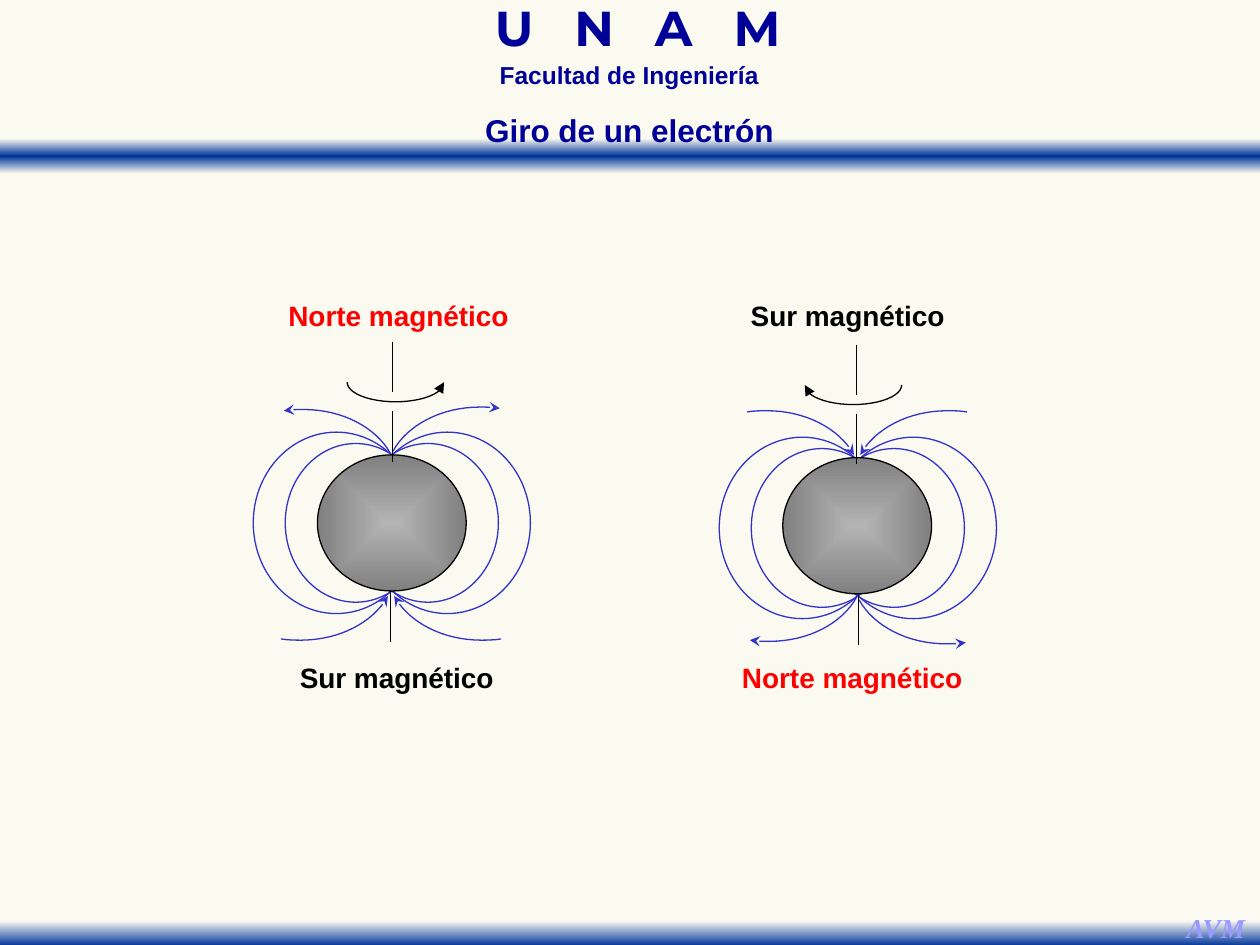
from dataclasses import dataclass
from math import cos, pi, sin

from lxml.etree import SubElement
from pptx import Presentation
from pptx.dml.color import RGBColor as RGB
from pptx.enum.shapes import MSO_CONNECTOR as CONNECTOR, MSO_SHAPE as SHAPE
from pptx.enum.text import MSO_ANCHOR as ANCHOR, MSO_AUTO_SIZE as AUTO_SIZE, PP_ALIGN as ALIGN
from pptx.oxml import parse_xml
from pptx.oxml.ns import nsdecls, qn
from pptx.util import Pt


@dataclass(frozen=True)
class Theme:
    background: str = "FAFAF0"
    bar_light: str = "FAFAF2"
    bar_dark: str = "003399"
    heading: str = "000099"
    signature: str = "9999FF"
    north: str = "FF0000"
    ink: str = "000000"
    field: str = "3333CC"
    sphere_light: str = "B4B4B4"
    sphere_dark: str = "808080"
    sans: str = "Arial"
    display: str = "Montserrat"
    serif: str = "Times New Roman"
    school_size: float = 28
    faculty_size: float = 14
    title_size: float = 18
    label_size: float = 16
    signature_size: float = 15.6
    line_width: float = 0.75


def set_attributes(target, values):
    for name, value in values.items():
        setattr(target, name, value)


def bezier(start, first, second, end, steps=16):
    """Points on a cubic curve, without its start point."""
    points = []
    for step in range(1, steps + 1):
        t = step / steps
        weights = ((1 - t) ** 3, 3 * t * (1 - t) ** 2, 3 * t * t * (1 - t), t ** 3)
        points.append(tuple(
            sum(weight * value for weight, value in zip(weights, values))
            for values in zip(start, first, second, end)))
    return points


class SlideBuilder:
    def __init__(self, slide, theme):
        self.slide, self.theme, self.shapes = slide, theme, slide.shapes
        slide.background.fill.solid()
        slide.background.fill.fore_color.rgb = RGB.from_string(theme.background)

    def start_group(self):
        self.shapes = self.slide.shapes.add_group_shape().shapes

    def end_group(self):
        self.shapes = self.slide.shapes

    def outline(self, shape, color, arrow=None):
        shape.line.color.rgb = RGB.from_string(color)
        shape.line.width = Pt(self.theme.line_width)
        if arrow:
            SubElement(shape.element.spPr.find(qn("a:ln")), qn("a:tailEnd"), type=arrow)

    def gradient(self, shape, stops, direction):
        """Fill with (percent, colour) stops; direction is a lin or path element."""
        shape.fill.gradient()
        plain = shape.element.spPr.find(qn("a:gradFill"))
        stop_list = "".join(
            f'<a:gs pos="{percent * 1000}"><a:srgbClr val="{color}"/></a:gs>'
            for percent, color in stops)
        plain.getparent().replace(plain, parse_xml(
            f'<a:gradFill {nsdecls("a")} rotWithShape="1">'
            f'<a:gsLst>{stop_list}</a:gsLst>{direction}</a:gradFill>'))

    def bar(self, top, stops):
        bar = self.shapes.add_shape(SHAPE.RECTANGLE, 0, Pt(top), Pt(720), Pt(20))
        bar.shadow.inherit = False
        bar.line.fill.background()
        self.gradient(bar, stops, '<a:lin ang="5400000" scaled="1"/>')

    def ellipse(self, center_x, center_y, width, height, color):
        ellipse = self.shapes.add_shape(
            SHAPE.OVAL, Pt(center_x - width / 2), Pt(center_y - height / 2),
            Pt(width), Pt(height))
        ellipse.shadow.inherit = False
        ellipse.fill.background()
        self.outline(ellipse, color)
        return ellipse

    def sphere(self, center_x, center_y):
        sphere = self.ellipse(center_x, center_y, 85, 77.8, self.theme.ink)
        self.gradient(
            sphere, [(0, self.theme.sphere_light), (100, self.theme.sphere_dark)],
            '<a:path path="shape"><a:fillToRect l="50000" t="50000" r="50000" b="50000"/></a:path>')

    def curve(self, points, color, arrow):
        """An open curve with its arrowhead at the last point."""
        start, *rest = [(Pt(x), Pt(y)) for x, y in points]
        builder = self.shapes.build_freeform(*start)
        builder.add_line_segments(rest, close=False)
        curve = builder.convert_to_shape()
        curve.shadow.inherit = False
        curve.fill.background()
        self.outline(curve, color, arrow)

    def vertical_line(self, x, top, bottom):
        line = self.shapes.add_connector(CONNECTOR.STRAIGHT, Pt(x), Pt(top), Pt(x), Pt(bottom))
        self.outline(line, self.theme.ink)
        SubElement(line.element.spPr, qn("a:effectLst"))

    def set_text(self, shape, text, size, color, font=None, align=ALIGN.CENTER,
                 spacing=None, tracking=0, italic=False, wrap=True):
        """Tracking is the extra space after each letter, in points."""
        set_attributes(shape.text_frame, {
            "text": text, "word_wrap": wrap, "vertical_anchor": ANCHOR.TOP,
            "auto_size": AUTO_SIZE.SHAPE_TO_FIT_TEXT})
        paragraph = shape.text_frame.paragraphs[0]
        set_attributes(paragraph, {"alignment": align, "line_spacing": spacing})
        run = paragraph.runs[0]
        set_attributes(run.font, {"name": font or self.theme.sans, "size": Pt(size),
                                  "bold": True, "italic": italic})
        run.font.color.rgb = RGB.from_string(color)
        if tracking:
            for properties in shape.element.iter(qn("a:rPr")):
                properties.set("spc", str(round(tracking * 100)))

    def text(self, box, text, size, color, **options):
        self.set_text(self.shapes.add_textbox(*map(Pt, box)), text, size, color, **options)

    def title(self, box, text):
        title = self.slide.shapes.title
        set_attributes(title, dict(zip(("left", "top", "width", "height"), map(Pt, box))))
        self.set_text(title, text, self.theme.title_size, self.theme.heading)
        title.element.getparent().append(title.element)  # in front of the bar

    def field(self, center_x, center_y, pole):
        """Field lines; pole is 1 with north on top and -1 with north below."""
        self.start_group()
        for side, root_x, root_y, outward in (
                (-1, -0.7, -39.6, True), (1, 0.7, -41, True),
                (-1, -2.2, 41.8, False), (1, 1.4, 41.8, False)):
            rise = 1 if outward else -1
            offsets = [(0, 0)]
            offsets += bezier((0, 0), (8.4, -15.2), (28, -25.2), (49.6, -25.2))
            offsets += bezier((49.6, -25.2), (53.2, -25.2), (56.9, -25.2), (61, -24.5), 4)
            points = [(center_x + root_x + side * x, center_y + pole * (root_y + rise * y))
                      for x, y in offsets]
            self.curve(points if outward else points[::-1], self.theme.field, "stealth")
        for offset, width, height in ((31.7, 95, 103.7), (20.6, 80.6, 90.7)):
            for side in (-1, 1):
                self.ellipse(center_x + side * offset, center_y, width, height, self.theme.field)
        self.end_group()

    def electron(self, center_x, center_y, turn):
        """Sphere with axis and spin arrow; turn is 1 to the right, -1 to the left."""
        self.start_group()
        self.sphere(center_x, center_y)
        angles = [pi * step / 24 for step in range(25)]
        self.curve([(center_x + turn * (2.2 - 27.7 * cos(angle)),
                     center_y - 80.4 + 11.2 * sin(angle)) for angle in angles],
                   self.theme.ink, "triangle")
        for offset, top, bottom in ((-0.7, 38.2, 68), (0.3, -64, -35), (0.3, -103.5, -74.7)):
            self.vertical_line(center_x + turn * offset, center_y + top, center_y + bottom)
        self.end_group()

    def pole_label(self, left, top, north):
        text, width, color = (("Norte magnético", 151, self.theme.north) if north
                              else ("Sur magnético", 135, self.theme.ink))
        self.text((left, top, width, 26.6), text, self.theme.label_size, color,
                  align=ALIGN.JUSTIFY)


def main():
    theme = Theme()
    presentation = Presentation()
    presentation.slide_width, presentation.slide_height = Pt(720), Pt(540)
    builder = SlideBuilder(presentation.slides.add_slide(presentation.slide_layouts[5]), theme)

    light, dark = theme.bar_light, theme.bar_dark
    builder.bar(79.2, [(0, light), (50, dark), (100, light)])
    builder.text((223.6, 4.3, 281.5, 31), "U N A M", theme.school_size, theme.heading,
                 font=theme.display, spacing=0.7, tracking=7.8)
    builder.text((231.1, 35.3, 257, 19.4), "Facultad de Ingeniería", theme.faculty_size,
                 theme.heading, spacing=0.7)
    builder.bar(520.6, [(28, light), (100, dark)])
    builder.text((670.3, 517, 49, 26.6), "AVM", theme.signature_size, theme.signature,
                 font=theme.serif, italic=True, wrap=False)

    builder.field(223.9, 298.8, pole=1)
    builder.electron(223.9, 298.8, turn=1)
    builder.field(490.2, 301.7, pole=-1)
    builder.electron(489.8, 300.4, turn=-1)

    top, bottom = 167, 373.7
    builder.pole_label(157.7, top, north=True)
    builder.pole_label(164.2, bottom, north=False)
    builder.pole_label(421.9, top, north=False)
    builder.pole_label(416.9, bottom, north=True)
    builder.title((203.8, 59.8, 311.8, 28.8), "Giro de un electrón")
    presentation.save("out.pptx")


if __name__ == "__main__":
    main()
